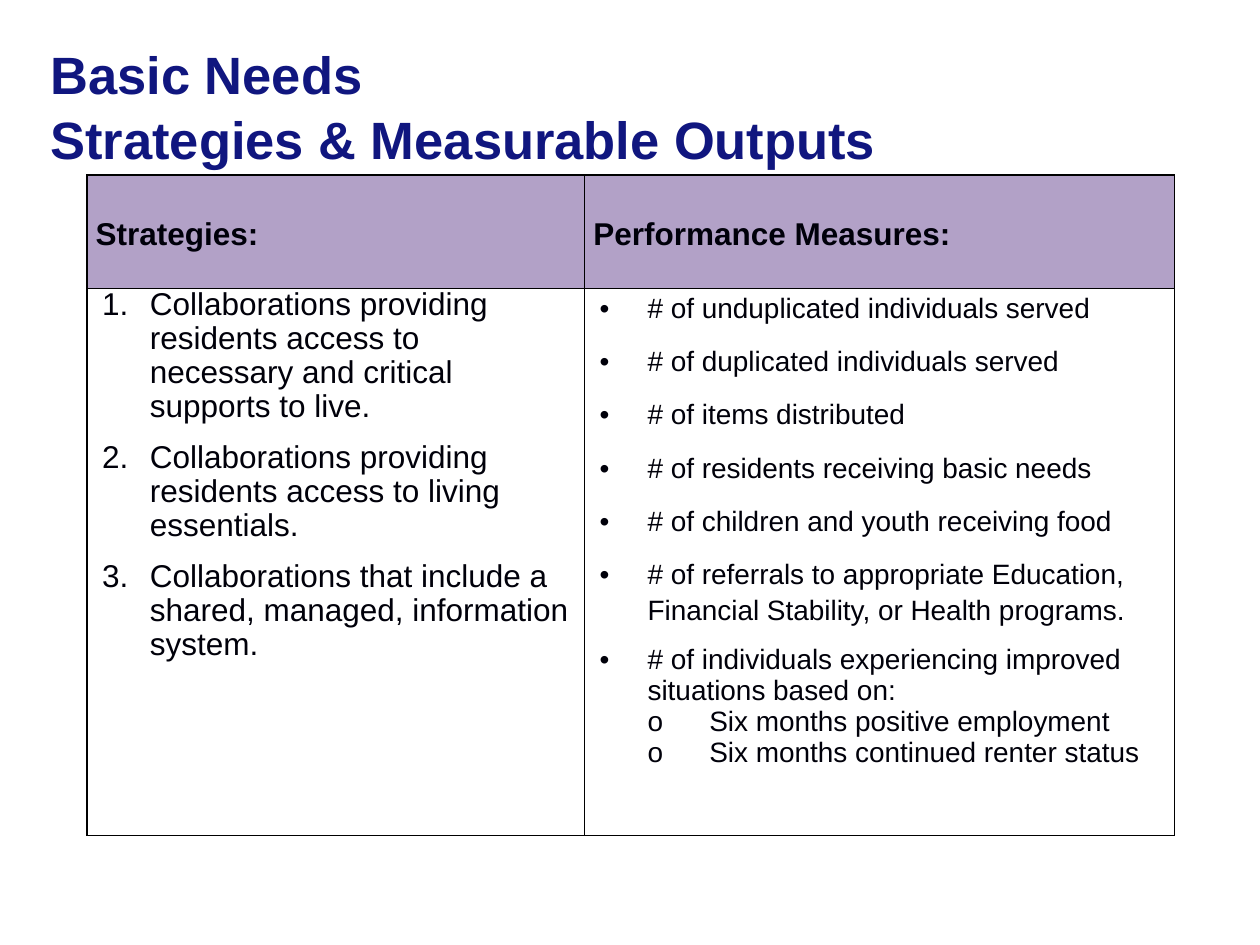
from lxml.etree import SubElement
from pptx import Presentation
from pptx.dml.color import RGBColor
from pptx.enum.text import MSO_ANCHOR
from pptx.oxml.ns import qn
from pptx.util import Inches, Pt

COLORS = {"title": "10167F", "text": "00000A", "header": "B2A1C7", "border": "000000"}
HEADERS = ["Strategies:", "Performance Measures:"]
STRATEGIES = [
    "Collaborations providing residents access to necessary and critical supports to live.",
    "Collaborations providing residents access to living essentials.",
    "Collaborations that include a shared, managed, information system.",
]
MEASURES = [
    "# of unduplicated individuals served",
    "# of duplicated individuals served",
    "# of items distributed",
    "# of residents receiving basic needs",
    "# of children and youth receiving food",
    "# of referrals to appropriate Education, Financial Stability, or Health programs.",
]
IMPROVED = "# of individuals experiencing improved situations based on:"
OUTCOMES = ["Six months positive employment", "Six months continued renter status"]


def style_font(font, size, color, bold=False):
    font.name = "Arial"
    font.size = Pt(size)
    font.bold = bold
    font.color.rgb = RGBColor.from_string(COLORS[color])


def fill_list(cell, items, size):
    """Write (text, bullet, left, hanging, line spacing, space after) items; no bullet means numbered."""
    text_frame = cell.text_frame
    text_frame.text = "\n".join(item[0] for item in items)
    for paragraph, (_, bullet, left, hanging, spacing, after) in zip(text_frame.paragraphs, items):
        properties = paragraph._p.get_or_add_pPr()
        properties.set("marL", str(Inches(left)))
        properties.set("indent", str(-Inches(hanging)))
        if bullet:
            SubElement(properties, qn("a:buFont"), typeface="Arial")
            SubElement(properties, qn("a:buChar"), char=bullet)
        else:
            SubElement(properties, qn("a:buFont"), typeface="+mj-lt")
            SubElement(properties, qn("a:buAutoNum"), type="arabicPeriod")
        paragraph.line_spacing = spacing
        paragraph.space_after = Pt(after)
        style_font(paragraph.runs[0].font, size, "text")


presentation = Presentation()
presentation.slide_width = Inches(10)
presentation.slide_height = Inches(7.5)
slide = presentation.slides.add_slide(presentation.slide_layouts[6])

# Title
title = slide.shapes.add_textbox(Inches(0.32), Inches(0.23), Inches(7.92), Inches(1.25))
title_frame = title.text_frame
title_frame.word_wrap = True
title_frame.margin_left = title_frame.margin_top = Inches(0.08)
title_frame.text = "Basic Needs\vStrategies & Measurable Outputs"
title_frame.paragraphs[0].line_spacing = 1.04
for run in title_frame.paragraphs[0].runs:
    style_font(run.font, 30, "title", bold=True)

# Table grid
table = slide.shapes.add_table(
    2, 2, Inches(0.69), Inches(1.39), Inches(8.64), Inches(5.24)
).table
table.first_row = table.horz_banding = False
for column, width in zip(table.columns, (3.95, 4.68)):
    column.width = Inches(width)
for row, height in zip(table.rows, (0.9, 4.34)):
    row.height = Inches(height)

for row_index, margin in enumerate((0.07, 0.12)):
    for cell in table.rows[row_index].cells:
        cell.margin_left = cell.margin_right = Inches(margin)
        cell.margin_top = cell.margin_bottom = 0
        cell_properties = cell._tc.get_or_add_tcPr()
        for side in ("lnL", "lnR", "lnT", "lnB"):
            line = SubElement(cell_properties, qn(f"a:{side}"), w=str(Pt(1)))
            solid = SubElement(line, qn("a:solidFill"))
            SubElement(solid, qn("a:srgbClr"), val=COLORS["border"])
        cell.fill.background()

# Header row
for cell, header in zip(table.rows[0].cells, HEADERS):
    cell.fill.solid()
    cell.fill.fore_color.rgb = RGBColor.from_string(COLORS["header"])
    cell.vertical_anchor = MSO_ANCHOR.MIDDLE
    cell.text_frame.text = header
    paragraph = cell.text_frame.paragraphs[0]
    paragraph.line_spacing = 1.15
    style_font(paragraph.runs[0].font, 18, "text", bold=True)

# Lists
fill_list(table.cell(1, 0), [(text, None, 0.38, 0.38, 0.96, 10) for text in STRATEGIES], 18)
fill_list(
    table.cell(1, 1),
    [(text, "•", 0.38, 0.38, 1.15, 10) for text in MEASURES]
    + [(IMPROVED, "•", 0.38, 0.38, 1.0, 0)]
    + [(text, "o", 0.87, 0.49, 1.0, 0) for text in OUTCOMES],
    16,
)

presentation.save("out.pptx")
